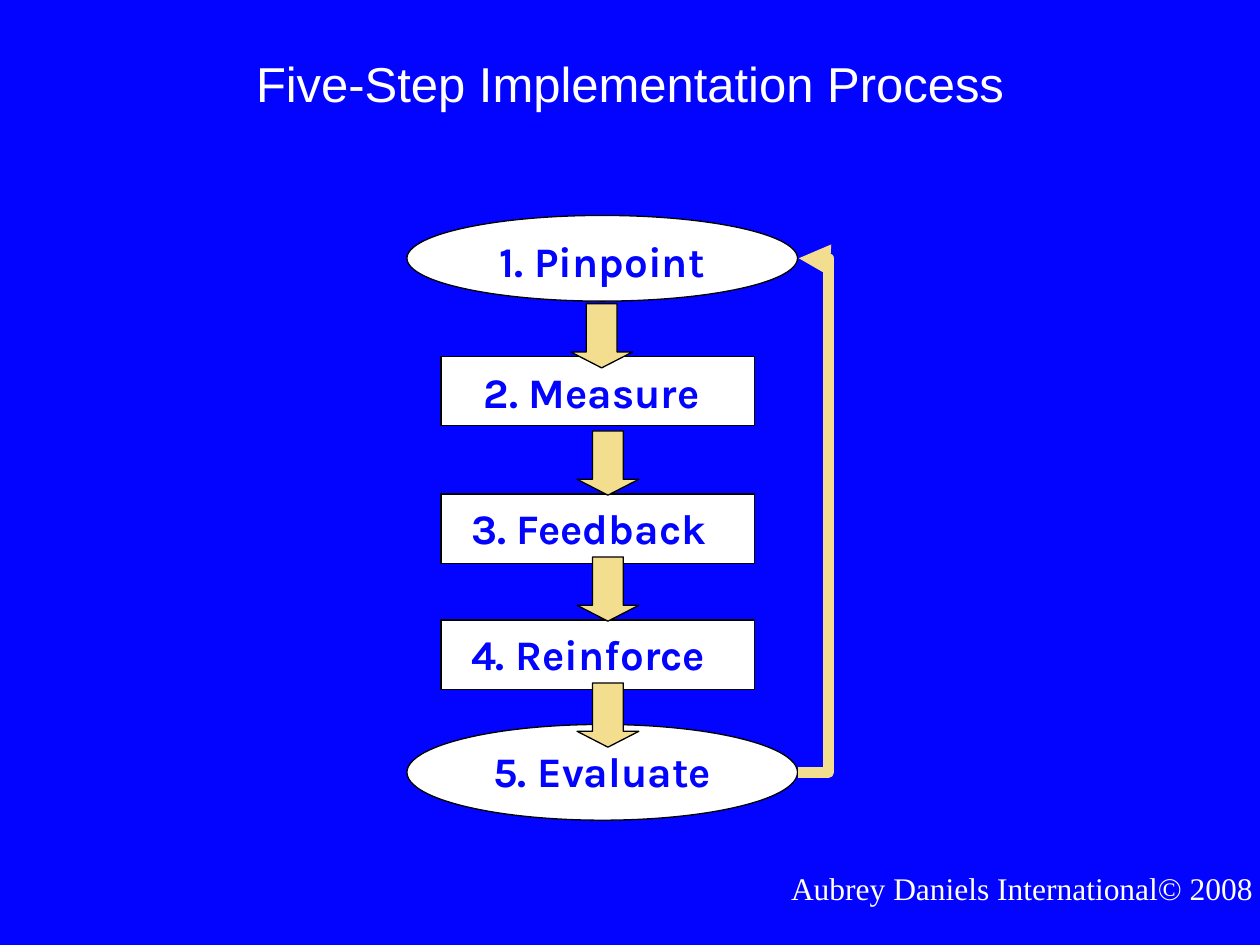
from dataclasses import dataclass

from lxml.etree import SubElement
from pptx import Presentation
from pptx.dml.color import RGBColor
from pptx.enum.shapes import MSO_CONNECTOR, MSO_SHAPE
from pptx.enum.text import MSO_ANCHOR, PP_ALIGN
from pptx.oxml.ns import qn
from pptx.util import Inches, Pt


@dataclass(frozen=True)
class Theme:
    blue: RGBColor = RGBColor(0x03, 0x04, 0xFF)
    white: RGBColor = RGBColor(0xFF, 0xFF, 0xFF)
    black: RGBColor = RGBColor(0x00, 0x00, 0x00)
    gold: RGBColor = RGBColor(0xF3, 0xDE, 0x8F)
    title_size: Pt = Pt(28)
    step_size: Pt = Pt(24)
    credit_size: Pt = Pt(18)
    outline: Pt = Pt(0.75)
    loop_width: Pt = Pt(6)


theme = Theme()
deck = Presentation()
deck.slide_width, deck.slide_height = Inches(10), Inches(7.5)
page = deck.slides.add_slide(deck.slide_layouts[6])
page.background.fill.solid()
page.background.fill.fore_color.rgb = theme.blue


def add_text(text, bounds, font_name, size, color, align=PP_ALIGN.LEFT, bold=False):
    box = page.shapes.add_textbox(*map(Inches, bounds))
    box.text_frame.word_wrap = True
    para = box.text_frame.paragraphs[0]
    para.text = text
    para.alignment = align
    para.font.name, para.font.size = font_name, size
    para.font.bold, para.font.color.rgb = bold, color
    return box


def add_outlined(kind, bounds, fill):
    shape = page.shapes.add_shape(kind, *map(Inches, bounds))
    shape.shadow.inherit = False
    shape.fill.solid()
    shape.fill.fore_color.rgb = fill
    shape.line.color.rgb = theme.black
    shape.line.width = theme.outline
    return shape


# Credit and title
add_text("Aubrey Daniels International© 2008", (6.18, 6.85, 6.43, 0.47),
         "Times New Roman", theme.credit_size, theme.white)
title = add_text("Five-Step Implementation Process", (0.75, 0.22, 8.5, 0.87),
                 "Arial", theme.title_size, theme.white, PP_ALIGN.CENTER)
title.text_frame.vertical_anchor = MSO_ANCHOR.MIDDLE

# Steps: ellipses start and end the process, rectangles lie between
ellipse = (MSO_SHAPE.OVAL, 3.23, 3.1, PP_ALIGN.CENTER)
rectangle = (MSO_SHAPE.RECTANGLE, 3.5, 2.49, PP_ALIGN.LEFT)
steps = [
    ("1. Pinpoint", ellipse, 1.71, 0.68, (3.48, 1.82, 2.6, 0.31)),
    ("2. Measure", rectangle, 2.83, 0.55, (3.74, 2.86, 2.06, 0.51)),
    ("3. Feedback", rectangle, 3.92, 0.55, (3.64, 3.94, 2.2, 0.5)),
    ("4. Reinforce", rectangle, 4.92, 0.55, (3.64, 4.94, 2.24, 0.51)),
    ("5. Evaluate", ellipse, 5.75, 0.76, (3.48, 5.87, 2.6, 0.35)),
]
step_shapes = []
for label, (kind, left, width, align), top, height, label_bounds in steps:
    step_shapes.append(add_outlined(kind, (left, top, width, height), theme.white))
    add_text(label, label_bounds, "Karla", theme.step_size, theme.blue, align, bold=True)

# Arrows down from step to step
for left, top in [(4.53, 2.41), (4.58, 3.42), (4.58, 4.42), (4.58, 5.42)]:
    arrow = add_outlined(MSO_SHAPE.DOWN_ARROW, (left, top, 0.49, 0.51), theme.gold)
    arrow.adjustments[0] = 0.5
    arrow.adjustments[1] = 0.257

# Loop from the right of the last step back to the right of the first
loop = page.shapes.add_connector(MSO_CONNECTOR.ELBOW, 0, 0, 0, 0)
loop.begin_connect(step_shapes[-1], 3)
loop.end_connect(step_shapes[0], 3)
loop.begin_x, loop.begin_y = Inches(6.33), Inches(6.13)
loop.end_x, loop.end_y = Inches(6.34), Inches(2.05)
loop.line.color.rgb = theme.gold
loop.line.width = theme.loop_width
SubElement(loop.get_or_add_ln(), qn("a:tailEnd"), type="triangle")
properties = loop._element.spPr
SubElement(properties, qn("a:effectLst"))

# An ellipse has eight connection sites; its rightmost is number 6
for tag in ("a:stCxn", "a:endCxn"):
    next(loop._element.iter(qn(tag))).set("idx", "6")

# The bend lies 25 connector widths (0.25 inch) to the right
guides = properties.find(qn("a:prstGeom")).get_or_add_avLst()
SubElement(guides, qn("a:gd"), name="adj1", fmla="val 2500000")

deck.save("out.pptx")
